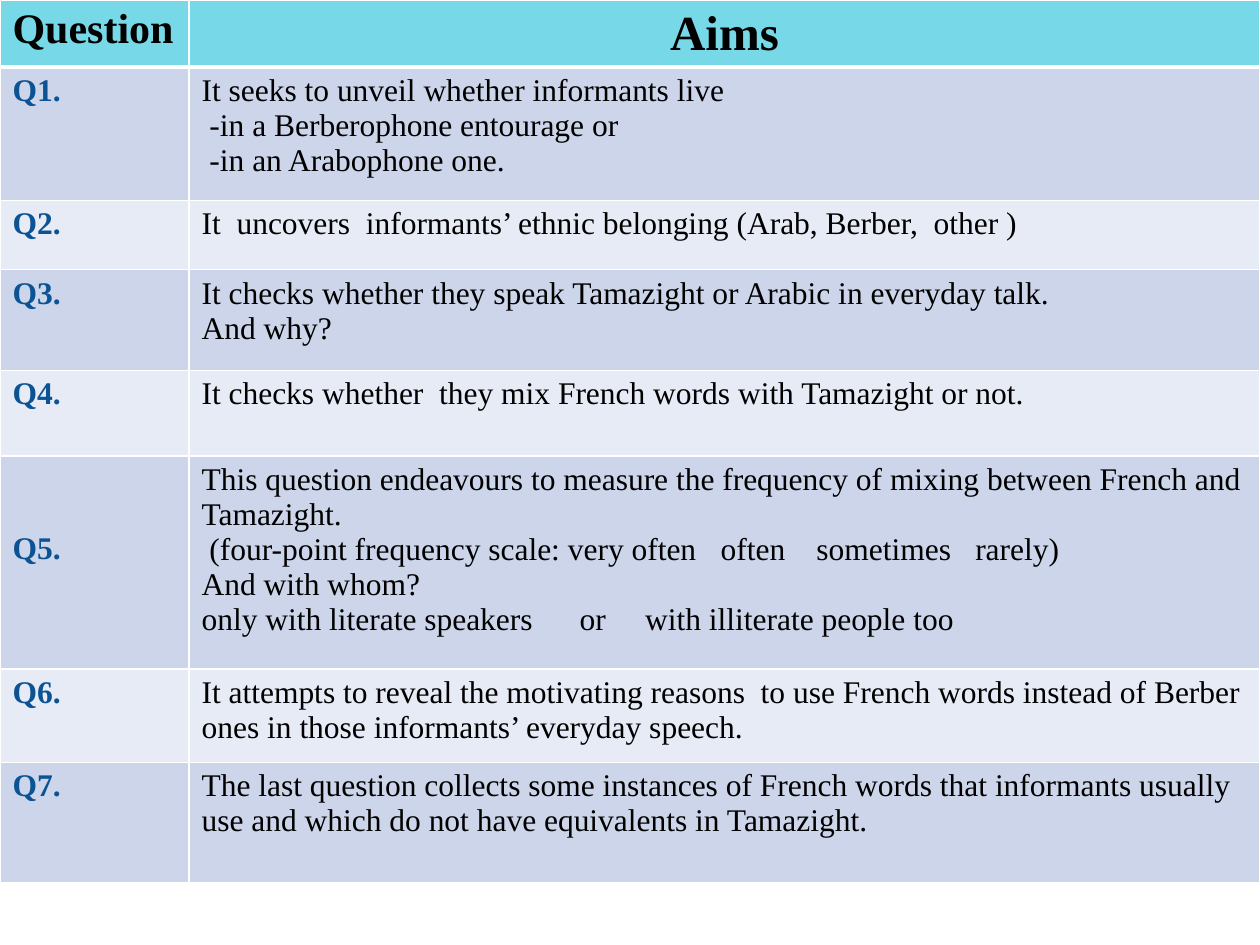
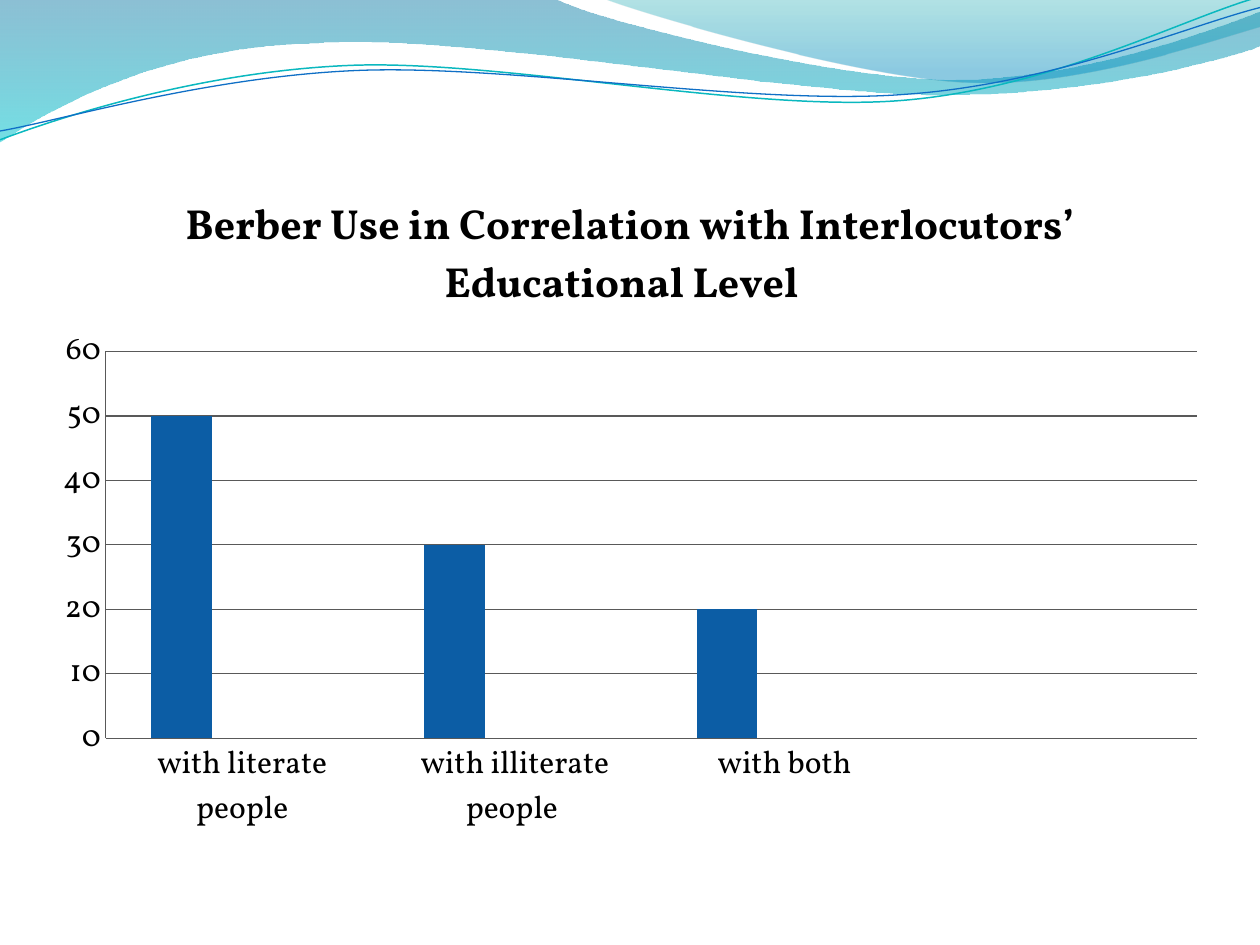
from dataclasses import dataclass

from lxml.etree import SubElement, fromstring
from pptx import Presentation
from pptx.chart.data import CategoryChartData
from pptx.dml.color import RGBColor
from pptx.enum.chart import XL_CHART_TYPE, XL_TICK_MARK
from pptx.enum.text import PP_ALIGN
from pptx.oxml.ns import nsdecls, qn
from pptx.util import Inches, Pt


@dataclass(frozen=True)
class Theme:
    table_font: str = "Times New Roman"
    chart_font: str = "Vollkorn"
    black: str = "000000"
    white: str = "FFFFFF"
    question: str = "0B5394"
    header: str = "77D9E8"
    bands: tuple = ("CCD5EA", "E7EBF5")
    series: tuple = ("0C5DA5", "009DD9", "0BD0D9")
    grid: str = "595959"
    body_size: int = 18
    heading_size: int = 24
    aims_size: int = 28


theme = Theme()


def write_text(text_frame, text, size=theme.body_size, color=theme.black,
               bold=False, font=theme.table_font, align=PP_ALIGN.LEFT):
    """Write one paragraph per line of text, all in the same format."""
    for index, line in enumerate(text.split("\n")):
        paragraph = text_frame.paragraphs[0] if index == 0 else text_frame.add_paragraph()
        paragraph.alignment = align
        run = paragraph.add_run()
        run.text = line
        run.font.name = font
        run.font.size = Pt(size)
        run.font.bold = bold
        run.font.color.rgb = RGBColor.from_string(color)


def add_outline(slide, start, segments, close):
    """Draw a freeform from line ends (one point) and Bezier curves (three points)."""
    builder = slide.shapes.build_freeform(Inches(start[0]), Inches(start[1]))
    points = [point for segment in segments for point in segment]
    builder.add_line_segments([(Inches(x), Inches(y)) for x, y in points], close=close)
    shape = builder.convert_to_shape()
    shape.shadow.inherit = False
    line_elements = iter(list(shape.element.iter(qn("a:lnTo"))))
    for segment in segments:
        corners = [next(line_elements) for _ in segment]
        if len(corners) == 3:
            corners[0].addprevious(curve := fromstring(f'<a:cubicBezTo {nsdecls("a")}/>'))
            for corner in corners:
                curve.append(corner[0])
                corner.getparent().remove(corner)
    return shape


presentation = Presentation()
presentation.slide_width, presentation.slide_height = Inches(10), Inches(7.5)
blank_layout = presentation.slide_layouts[6]
table_slide = presentation.slides.add_slide(blank_layout)
chart_slide = presentation.slides.add_slide(blank_layout)

# Shared wave: two gradient bands (color, position, opacity) and two thin lines
wave_bands = [
    ((0, 0), [
        [(4.4, -0.01)],
        [(4.76, 0.17), (6.64, 0.63), (7.58, 0.63)],
        [(8.53, 0.63), (9.58, 0.26), (10, 0.09)],
        [(10.01, 0.36)],
        [(9.83, 0.44), (8.7, 0.76), (7.46, 0.75)],
        [(6.22, 0.75), (3.82, 0.28), (2.57, 0.34)],
        [(1.29, 0.36), (0.46, 0.83), (-0.01, 1.13)],
    ], [("0074A1", 0, 45), ("00C6CF", 1, 55)]),
    ((4.79, -0.01), [
        [(5.09, 0.11), (6.82, 0.62), (7.69, 0.65)],
        [(8.56, 0.69), (9.61, 0.32), (10, 0.21)],
        [(10, 0)],
    ], [("00A1A9", 0, 30), ("008BBF", 0.8, 45)]),
]
wave_lines = [
    ((0, 1.11), [
        [(0.48, 0.93), (1.58, 0.57), (2.77, 0.52)],
        [(3.95, 0.47), (5.93, 0.89), (7.13, 0.8)],
        [(8.33, 0.71), (9.38, 0.15), (9.98, -0.02)],
    ], "0AB8BF", 0.85),
    ((0, 1.04), [
        [(0.47, 0.96), (1.64, 0.61), (2.83, 0.56)],
        [(4.03, 0.51), (5.97, 0.84), (7.17, 0.75)],
        [(8.36, 0.67), (9.41, 0.21), (10, 0.06)],
    ], "0F6FC6", 0.75),
]
wave_shapes = []
for start, segments, stops in wave_bands:
    shape = add_outline(table_slide, start, segments, close=True)
    shape.line.fill.background()
    shape.fill.gradient()
    shape.fill.gradient_angle = 270
    for stop, (color, position, _) in zip(shape.fill.gradient_stops, stops):
        stop.color.rgb = RGBColor.from_string(color)
        stop.position = position
    for color_element, (_, _, opacity) in zip(shape.element.spPr.iter(qn("a:srgbClr")), stops):
        SubElement(color_element, qn("a:alpha"), val=str(opacity * 1000))
    wave_shapes.append(shape)
for start, segments, color, width in wave_lines:
    shape = add_outline(table_slide, start, segments, close=False)
    shape.fill.background()
    shape.line.color.rgb = RGBColor.from_string(color)
    shape.line.width = Pt(width)
    wave_shapes.append(shape)

# The wave belongs to the master, so both slides show it
for number, shape in enumerate(wave_shapes, start=101):
    shape.element.nvSpPr.cNvPr.set("id", str(number))
    presentation.slide_master.shapes.element.append(shape.element)

# Slide 1: table of questions and aims, with row heights
rows = [
    (0.47, "Question", "Aims"),
    (1.06, "Q1.", "It seeks to unveil whether informants live\n"
                  " -in a Berberophone entourage or\n -in an Arabophone one."),
    (0.55, "Q2.", "It  uncovers  informants’ ethnic belonging (Arab, Berber,  other )"),
    (0.8, "Q3.", "It checks whether they speak Tamazight or Arabic in everyday talk.\nAnd why?"),
    (0.68, "Q4.", "It checks whether  they mix French words with Tamazight or not."),
    (1.69, "Q5.", "This question endeavours to measure the frequency of mixing between "
                  "French and Tamazight.\n"
                  " (four-point frequency scale: very often\toften\tsometimes\trarely)\n"
                  "And with whom?\n"
                  "only with literate speakers\tor\twith illiterate people too"),
    (0.74, "Q6.", "It attempts to reveal the motivating reasons  to use French words instead "
                  "of Berber ones in those informants’ everyday speech."),
    (0.96, "Q7.", "The last question collects some instances of French words that informants "
                  "usually use and which do not have equivalents in Tamazight."),
]
table = table_slide.shapes.add_table(len(rows), 2, 0, 0, Inches(10),
                                     Inches(sum(row[0] for row in rows))).table
table.columns[0].width, table.columns[1].width = Inches(1.5), Inches(8.5)
for row_index, (height, question, aim) in enumerate(rows):
    table.rows[row_index].height = Inches(height)
    is_header = row_index == 0
    question_cell, aim_cell = table.rows[row_index].cells
    for cell in (question_cell, aim_cell):
        for side in "LRTB":
            heavy = (is_header and side == "B") or (row_index == 1 and side == "T")
            border = SubElement(cell._tc.get_or_add_tcPr(), qn(f"a:ln{side}"),
                                w=str(Pt(3 if heavy else 1)))
            SubElement(SubElement(border, qn("a:solidFill")), qn("a:srgbClr"), val=theme.white)
        cell.fill.solid()
        fill_color = theme.header if is_header else theme.bands[(row_index - 1) % 2]
        cell.fill.fore_color.rgb = RGBColor.from_string(fill_color)
    if is_header:
        write_text(question_cell.text_frame, question, size=theme.heading_size, bold=True)
        write_text(aim_cell.text_frame, aim, size=theme.aims_size, bold=True, align=PP_ALIGN.CENTER)
    else:
        write_text(question_cell.text_frame, question, color=theme.question, bold=True)
        write_text(aim_cell.text_frame, aim)

# Q5: label beside the scale, and tab stops for the answer choices
table.cell(5, 0).margin_top = Inches(0.6)
scale_paragraphs = table.cell(5, 1).text_frame.paragraphs
for paragraph_index, stops in ((1, (4.12, 4.88, 6.14)), (3, (3, 3.52))):
    tab_list = SubElement(scale_paragraphs[paragraph_index]._p.get_or_add_pPr(), qn("a:tabLst"))
    for stop in stops:
        SubElement(tab_list, qn("a:tab"), pos=str(Inches(stop)), algn="l")

# Slide 2: column chart
chart_width, chart_height = 9.38, 5.39
chart_data = CategoryChartData()
chart_data.categories = ["with literate people", "with illiterate people ", "with both ", ""]
chart_data.add_series("Series 1", (50, 30, 20, None))
for name in ("Series 2", "Series 3"):
    chart_data.add_series(name, (None,) * 4)
chart = chart_slide.shapes.add_chart(XL_CHART_TYPE.COLUMN_CLUSTERED, Inches(0.31), Inches(1.33),
                                     Inches(chart_width), Inches(chart_height), chart_data).chart
chart.has_legend = False
chart.font.name = theme.chart_font
chart.font.size = Pt(theme.body_size)
chart.font.color.rgb = RGBColor.from_string(theme.black)
chart.has_title = True
chart.chart_title.include_in_layout = False
write_text(chart.chart_title.text_frame,
           "Berber Use in Correlation with Interlocutors’ Educational Level  ",
           size=theme.heading_size, bold=True, font=theme.chart_font, align=PP_ALIGN.CENTER)

plot = chart.plots[0]
plot.gap_width = 150
plot.overlap = 0
plot.vary_by_categories = False
for series, color in zip(plot.series, theme.series):
    series.format.fill.solid()
    series.format.fill.fore_color.rgb = RGBColor.from_string(color)

value_axis = chart.value_axis
value_axis.minimum_scale, value_axis.maximum_scale, value_axis.major_unit = 0, 60, 10
value_axis.has_major_gridlines = True
for axis in (chart.category_axis, value_axis):
    axis.major_tick_mark = axis.minor_tick_mark = XL_TICK_MARK.NONE
for line in (chart.category_axis.format.line, value_axis.format.line,
             value_axis.major_gridlines.format.line):
    line.color.rgb = RGBColor.from_string(theme.grid)
    line.width = Pt(0.75)

# Fixed inner plot area, in inches within the chart
plot_area = chart.element.find(".//" + qn("c:plotArea"))
for layout in plot_area.findall(qn("c:layout")):
    plot_area.remove(layout)
layout = fromstring(f'<c:layout {nsdecls("c")}><c:manualLayout/></c:layout>')
settings = {"layoutTarget": "inner", "xMode": "edge", "yMode": "edge",
            "x": 0.53 / chart_width, "y": 1.46 / chart_height,
            "w": 8.66 / chart_width, "h": 3.07 / chart_height}
for name, value in settings.items():
    SubElement(layout[0], qn(f"c:{name}"), val=str(value))
plot_area.insert(0, layout)

presentation.save("out.pptx")
